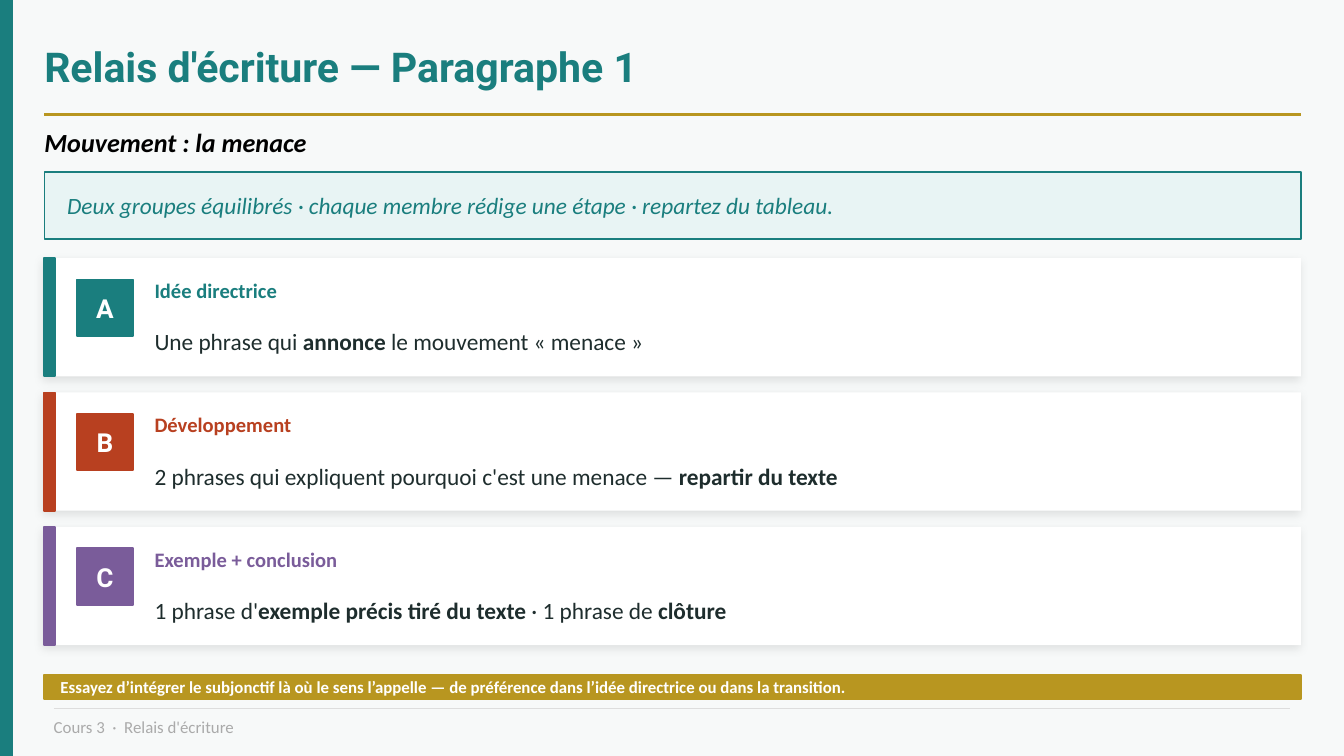
"""Build the writing-relay slide for paragraph 1."""
from lxml import etree
from pptx import Presentation
from pptx.dml.color import RGBColor
from pptx.enum.shapes import MSO_CONNECTOR, MSO_SHAPE
from pptx.enum.text import MSO_ANCHOR, MSO_AUTO_SIZE, PP_ALIGN
from pptx.oxml import parse_xml
from pptx.oxml.ns import nsdecls, qn
from pptx.util import Inches, Pt

RECTANGLE = MSO_SHAPE.RECTANGLE
STRAIGHT = MSO_CONNECTOR.STRAIGHT
MIDDLE = MSO_ANCHOR.MIDDLE
NO_AUTOFIT = MSO_AUTO_SIZE.NONE
LEFT, CENTER = PP_ALIGN.LEFT, PP_ALIGN.CENTER

TEAL = RGBColor(0x1A, 0x7E, 0x7E)
PALE_TEAL = RGBColor(0xE8, 0xF4, 0xF4)
RUST = RGBColor(0xB8, 0x40, 0x20)
PURPLE = RGBColor(0x7A, 0x5C, 0x9A)
GOLD = RGBColor(0xB8, 0x96, 0x20)
INK = RGBColor(0x1E, 0x2D, 0x2D)
BLACK = RGBColor(0x00, 0x00, 0x00)
WHITE = RGBColor(0xFF, 0xFF, 0xFF)
PAPER = RGBColor(0xF7, 0xF9, 0xF9)
RULE_GREY = RGBColor(0xDD, 0xDD, 0xDD)
FOOTER_GREY = RGBColor(0xAA, 0xAA, 0xAA)

HEADING_FONT, BODY_FONT = "Roboto", "Calibri"
SLIDE_WIDTH = 10
SLIDE_HEIGHT = SLIDE_WIDTH * 9 / 16
MARGIN, CONTENT_WIDTH = 0.33, 9.35
FIRST_CARD_TOP, CARD_STEP, CARD_HEIGHT = 1.92, 1, 0.88

STEPS = [
    ("A", "Idée directrice", TEAL,
     [("Une phrase qui ", False), ("annonce ", True),
      ("le mouvement « menace »", False)]),
    ("B", "Développement", RUST,
     [("2 phrases qui expliquent pourquoi c'est une menace — ", False),
      ("repartir du texte", True)]),
    ("C", "Exemple + conclusion", PURPLE,
     [("1 phrase d'", False), ("exemple précis tiré du texte ", True),
      ("· 1 phrase de ", False), ("clôture", True)]),
]


def write(shape, runs, size, color, font=BODY_FONT, italic=False,
          align=LEFT, indent=0):
    """Fill a shape with one paragraph of (text, bold) runs."""
    frame = shape.text_frame
    frame.word_wrap = True
    frame.auto_size = NO_AUTOFIT
    frame.vertical_anchor = MIDDLE
    frame.margin_left = Inches(indent)
    frame.margin_top = frame.margin_right = frame.margin_bottom = 0
    paragraph = frame.paragraphs[0]
    paragraph.alignment = align
    for text, bold in runs:
        run = paragraph.add_run()
        run.text = text
        run.font.name = font
        run.font.size = Pt(size)
        run.font.bold = bold
        run.font.italic = italic
        run.font.color.rgb = color


def add_title(slide, text):
    """Place and format the title placeholder."""
    title = slide.shapes.title
    title.left, title.top = Inches(MARGIN), Inches(0.22)
    title.width, title.height = Inches(CONTENT_WIDTH), Inches(0.55)
    write(title, [(text, True)], 22, TEAL, HEADING_FONT)


def add_label(slide, box, runs, size, color, italic=False):
    """Add a text box at the given left, top, width and height."""
    label = slide.shapes.add_textbox(*map(Inches, box))
    write(label, runs, size, color, italic=italic)


def add_block(slide, box, fill, outline=None, weight=1):
    """Add a flat rectangle, outlined only when a colour is given."""
    block = slide.shapes.add_shape(RECTANGLE, *map(Inches, box))
    block.shadow.inherit = False
    block.fill.solid()
    block.fill.fore_color.rgb = fill
    if outline is None:
        block.line.fill.background()
    else:
        block.line.color.rgb = outline
        block.line.width = Pt(weight)
    return block


def add_soft_shadow(block):
    """Give a block a faint shadow towards the lower left."""
    effects = block._element.spPr.find(qn("a:effectLst"))
    effects.append(parse_xml(
        f'<a:outerShdw {nsdecls("a")} blurRad="{Pt(5)}" dist="{Pt(2)}" '
        f'dir="{135 * 60000}" algn="bl" rotWithShape="0">'
        '<a:srgbClr val="000000"><a:alpha val="9000"/></a:srgbClr>'
        '</a:outerShdw>'))


def add_rule(slide, left, right, top, color, weight):
    """Add a horizontal line."""
    rule = slide.shapes.add_connector(
        STRAIGHT, Inches(left), Inches(top), Inches(right), Inches(top))
    rule.line.color.rgb = color
    rule.line.width = Pt(weight)
    etree.SubElement(rule._element.spPr, qn("a:effectLst"))


def add_step_card(slide, top, letter, heading, accent, instruction):
    """Add one step: card, accent bar, letter badge and two texts."""
    card = add_block(slide, (MARGIN, top, CONTENT_WIDTH, CARD_HEIGHT), WHITE)
    add_soft_shadow(card)
    add_block(slide, (MARGIN, top, 0.08, CARD_HEIGHT), accent, accent)
    badge = add_block(slide, (0.57, top + 0.16, 0.42, 0.42), accent, accent)
    write(badge, [(letter, True)], 14, WHITE, HEADING_FONT, align=CENTER)
    add_label(slide, (1.15, top + 0.1, 8.3, 0.28), [(heading, True)], 11, accent)
    add_label(slide, (1.15, top + 0.44, 8.3, 0.36), instruction, 12.5, INK)


def main():
    """Build and save the slide."""
    deck = Presentation()
    deck.slide_width = Inches(SLIDE_WIDTH)
    deck.slide_height = Inches(SLIDE_HEIGHT)
    slide = deck.slides.add_slide(deck.slide_layouts[5])
    slide.background.fill.solid()
    slide.background.fill.fore_color.rgb = PAPER

    add_block(slide, (0, 0, 0.09, SLIDE_HEIGHT), TEAL, TEAL)
    add_title(slide, "Relais d'écriture — Paragraphe 1")
    add_rule(slide, MARGIN, MARGIN + CONTENT_WIDTH, 0.85, GOLD, 1.5)
    add_label(slide, (MARGIN, 0.9, CONTENT_WIDTH, 0.32),
              [("Mouvement : la menace", True)], 14, BLACK, italic=True)

    briefing = add_block(slide, (MARGIN, 1.28, CONTENT_WIDTH, 0.5),
                         PALE_TEAL, TEAL, 0.8)
    write(briefing, [("Deux groupes équilibrés · chaque membre rédige une étape"
                      " · repartez du tableau.", False)],
          12.5, TEAL, italic=True, indent=0.17)

    for index, step in enumerate(STEPS):
        add_step_card(slide, FIRST_CARD_TOP + index * CARD_STEP, *step)

    reminder = add_block(slide, (MARGIN, 5.02, CONTENT_WIDTH, 0.18), GOLD, GOLD)
    write(reminder, [("Essayez d’intégrer le subjonctif là où le sens l’appelle"
                      " — de préférence dans l’idée directrice ou dans la"
                      " transition.", True)], 9, WHITE, indent=0.12)

    add_rule(slide, 0.4, 9.6, 5.27, RULE_GREY, 0.75)
    add_label(slide, (0.4, 5.3, 9.2, 0.22),
              [("Cours 3  ·  Relais d'écriture", False)], 9, FOOTER_GREY)
    deck.save("out.pptx")


if __name__ == "__main__":
    main()
